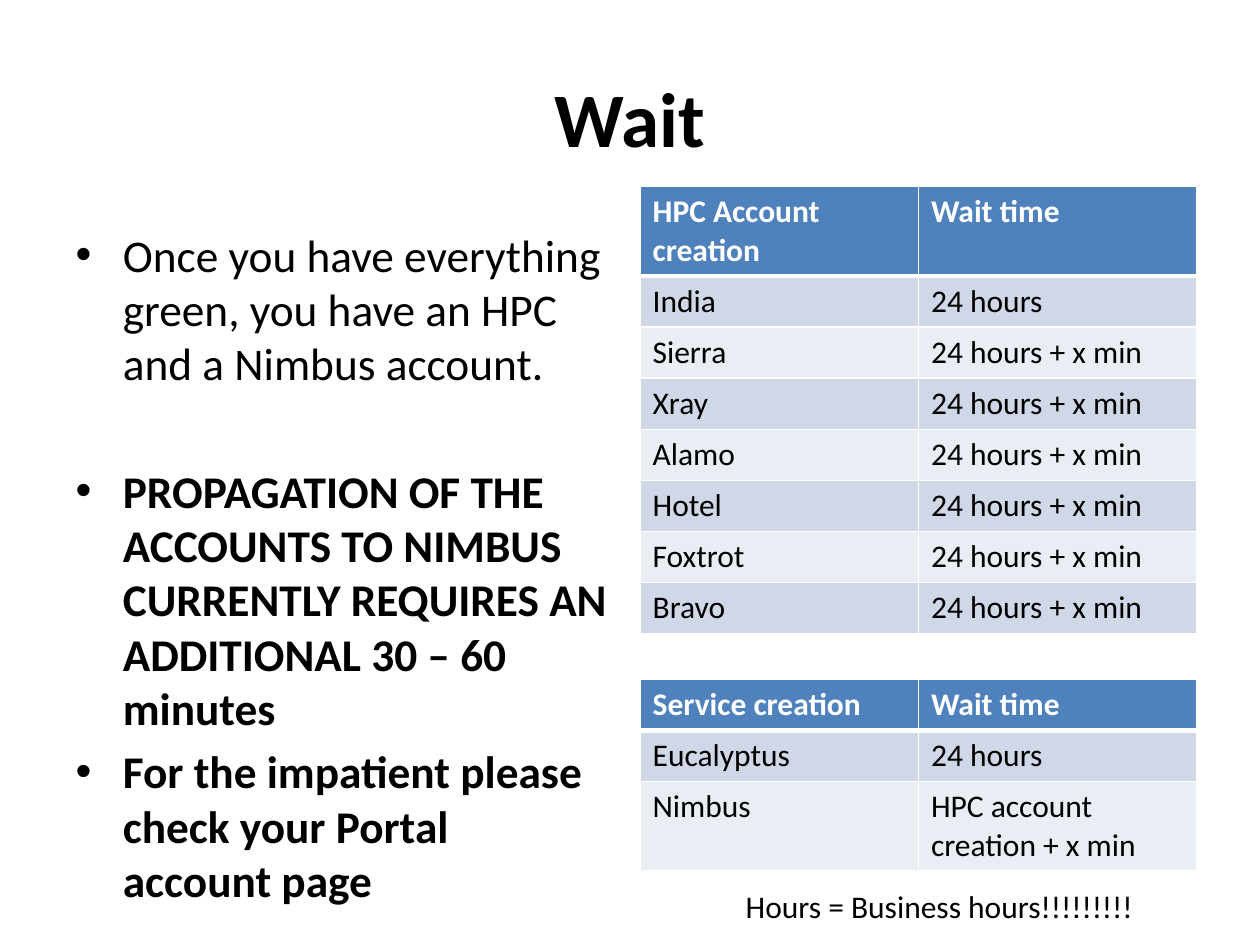
import pptx
import pptx.dml.color
import pptx.enum.text
import pptx.oxml
import pptx.oxml.ns
import pptx.util

Inches = pptx.util.Inches
Pt = pptx.util.Pt
ANCHOR = pptx.enum.text.MSO_ANCHOR
ALIGN = pptx.enum.text.PP_ALIGN
FIT = pptx.enum.text.MSO_AUTO_SIZE

COLORS = {
    "text": "000000",
    "white": "FFFFFF",
    "head": "4F81BD",
    "odd": "D0D8E8",
    "even": "E9EDF4",
}


def color(name):
    return pptx.dml.color.RGBColor.from_string(COLORS[name])


def write(para, text, size=18, bold=False, ink="text", font="Calibri",
          align=None, before=0):
    """Put formatted text into a paragraph."""
    para.alignment = align
    para.space_before = Pt(before)
    run = para.add_run()
    run.text = text
    run.font.name = font
    run.font.size = Pt(size)
    run.font.bold = bold
    run.font.color.rgb = color(ink)


def border(cell, side, width):
    """Draw one white cell border; side is L, R, T or B."""
    line = pptx.oxml.parse_xml(
        f'<a:ln{side} {pptx.oxml.ns.nsdecls("a")} w="{Pt(width)}">'
        f'<a:solidFill><a:srgbClr val="{COLORS["white"]}"/></a:solidFill>'
        f'</a:ln{side}>')
    cell._tc.get_or_add_tcPr().append(line)


class Deck:
    def __init__(self):
        self.prs = pptx.Presentation()
        self.prs.slide_width = Inches(10)
        self.prs.slide_height = Inches(7.5)
        self.slide = self.prs.slides.add_slide(self.prs.slide_layouts[1])

    def place(self, shape, left, top, width, height):
        shape.left, shape.top = Inches(left), Inches(top)
        shape.width, shape.height = Inches(width), Inches(height)

    def title(self, text, *box):
        shape = self.slide.shapes.title
        self.place(shape, *box)
        frame = shape.text_frame
        frame.vertical_anchor = ANCHOR.MIDDLE
        write(frame.paragraphs[0], text, size=44, bold=True,
              align=ALIGN.CENTER)

    def bullets(self, items, *box):
        shape = self.slide.placeholders[1]
        self.place(shape, *box)
        frame = shape.text_frame
        frame.auto_size = FIT.NONE
        for i, (text, bold, before) in enumerate(items):
            para = frame.add_paragraph() if i else frame.paragraphs[0]
            write(para, text, size=25.9, bold=bold, before=before)

    def table(self, rows, heights, left, top, width):
        shape = self.slide.shapes.add_table(
            len(rows), len(rows[0]), Inches(left), Inches(top),
            Inches(width), Inches(sum(heights)))
        grid = shape.table
        for r, row in enumerate(rows):
            grid.rows[r].height = Inches(heights[r])
            head = r == 0
            fill = "head" if head else ("even", "odd")[r % 2]
            for c, text in enumerate(row):
                cell = grid.cell(r, c)
                for side in "LRTB":
                    thick = (head and side == "B") or (r == 1 and side == "T")
                    border(cell, side, 3 if thick else 1)
                cell.fill.solid()
                cell.fill.fore_color.rgb = color(fill)
                write(cell.text_frame.paragraphs[0], text, bold=head,
                      ink="white" if head else "text")

    def note(self, text, *box):
        shape = self.slide.shapes.add_textbox(*map(Inches, box))
        frame = shape.text_frame
        frame.word_wrap = False
        frame.auto_size = FIT.SHAPE_TO_FIT_TEXT
        write(frame.paragraphs[0], text)


def main():
    deck = Deck()

    # Title and bullet list: text, bold, space before
    deck.title("Wait", 0.5, 0.3, 9, 1.25)
    deck.bullets([
        ("Once you have everything green, you have an HPC and a Nimbus "
         "account.", False, 0),
        ("PROPAGATION OF THE ACCOUNTS TO NIMBUS CURRENTLY REQUIRES AN "
         "ADDITIONAL 30 – 60 minutes", True, 41.5),
        ("For the impatient please check your Portal account page", True, 5),
    ], 0.5, 1.75, 4.42, 4.95)

    # Wait times for accounts
    sites = ["Sierra", "Xray", "Alamo", "Hotel", "Foxtrot", "Bravo"]
    hosts = [("HPC Account creation", "Wait time"), ("India", "24 hours")]
    hosts += [(site, "24 hours + x min") for site in sites]
    deck.table(hosts, [0.7] + [0.4] * 7, 5.08, 1.48, 4.42)

    # Wait times for services
    deck.table([
        ("Service creation", "Wait time"),
        ("Eucalyptus", "24 hours"),
        ("Nimbus", "HPC account creation + x min"),
    ], [0.4, 0.4, 0.7], 5.08, 5.39, 4.42)

    # Footnote
    deck.note("Hours = Business hours!!!!!!!!!", 5.82, 6.99, 3.32, 0.4)

    deck.prs.save("out.pptx")


if __name__ == "__main__":
    main()
